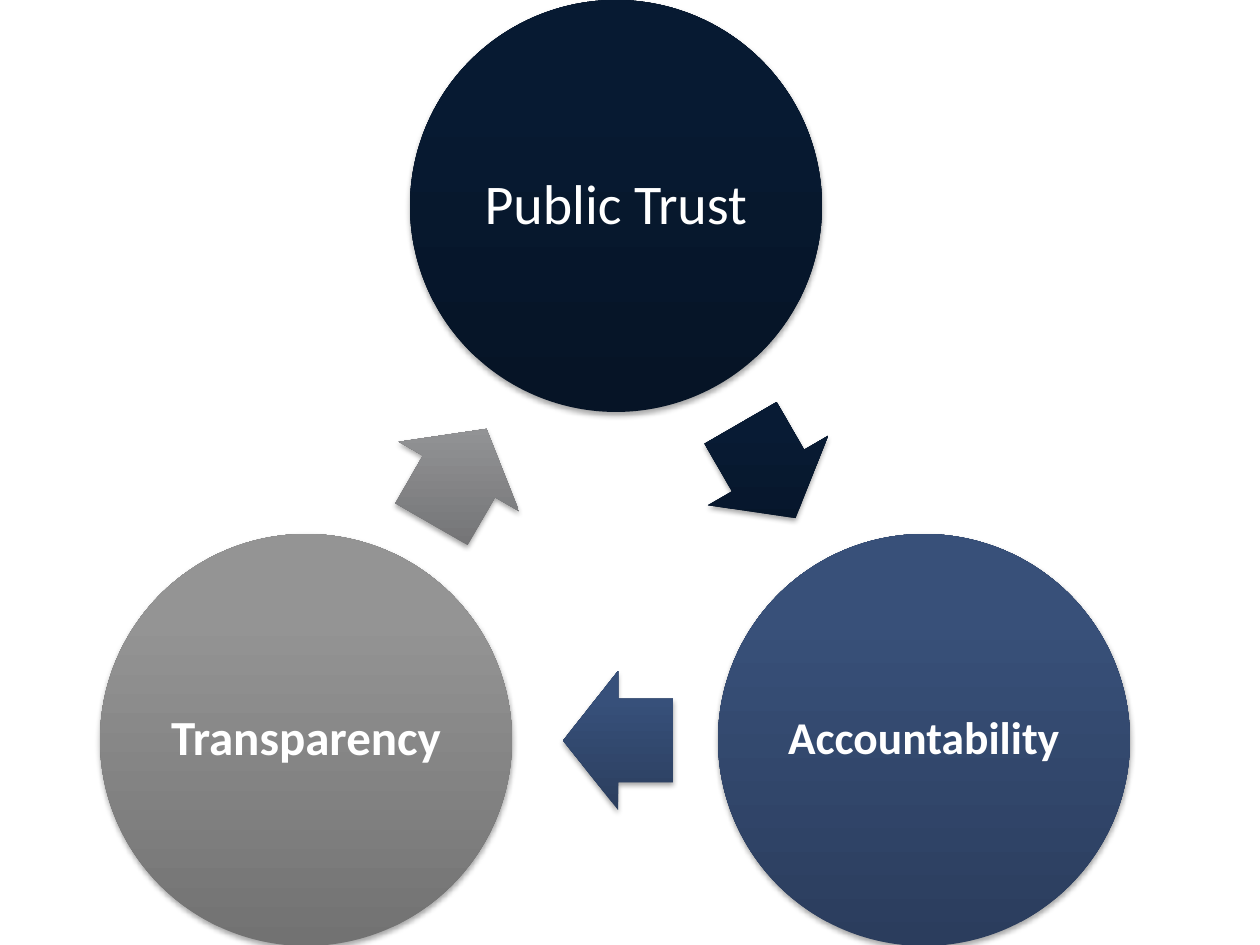
from pptx import Presentation
from pptx.dml.color import RGBColor
from pptx.enum.shapes import MSO_SHAPE as Preset
from pptx.enum.text import MSO_ANCHOR as Anchor, PP_ALIGN as Align
from pptx.oxml import parse_xml
from pptx.oxml.ns import nsdecls, qn
from pptx.util import Pt

PX = 914400 / 126
CIRCLE = 412
ARROW_WIDTH, ARROW_HEIGHT = 110, 139
STOPS = (0, 80, 100)

STAGES = [
    {"text": "Public Trust", "size": 32, "bold": False, "circle_at": (410, 0),
     "circle_colors": ("061426", "071A32", "071A33"), "arrow_at": (713, 401),
     "arrow_colors": ("061528", "081B34", "071B35"), "rotation": 60},
    {"text": "Accountability", "size": 26, "bold": True, "circle_at": (718, 534),
     "circle_colors": ("2B3D5D", "385079", "37507B"), "arrow_at": (563, 671),
     "arrow_colors": ("2B3E5E", "37507A", "36507C"), "rotation": 180},
    {"text": "Transparency", "size": 28, "bold": True, "circle_at": (100, 534),
     "circle_colors": ("727272", "949494", "959595"), "arrow_at": (404, 407),
     "arrow_colors": ("717173", "929395", "939496"), "rotation": 300},
]


def px(length):
    """Turn pixels into EMU."""
    return round(length * PX)


def rgb(color):
    """Turn a hex string into a colour."""
    return RGBColor.from_string(color)


def apply_gradient(shape, colors):
    """Fill a shape from bottom to top, keeping the direction upright."""
    stops = "".join(
        f'<a:gs pos="{stop * 1000}"><a:srgbClr val="{rgb(color)}"/></a:gs>'
        for stop, color in zip(STOPS, colors))
    gradient = parse_xml(
        f'<a:gradFill {nsdecls("a")} rotWithShape="0"><a:gsLst>{stops}</a:gsLst>'
        '<a:lin ang="16200000" scaled="0"/></a:gradFill>')
    shape._element.spPr.find(qn("a:prstGeom")).addnext(gradient)


def apply_shadow(shape):
    """Give a shape a soft shadow below it."""
    shape.shadow.inherit = False
    shape._element.spPr.find(qn("a:effectLst")).append(parse_xml(
        f'<a:outerShdw {nsdecls("a")} blurRad="{Pt(3.1)}" dist="{Pt(1.8)}" '
        'dir="5400000" rotWithShape="0"><a:srgbClr val="000000">'
        '<a:alpha val="35000"/></a:srgbClr></a:outerShdw>'))


def add_shaded_shape(slide, preset, box, colors):
    """Add a borderless shape with a gradient and a shadow."""
    shape = slide.shapes.add_shape(preset, *map(px, box))
    shape.line.fill.background()
    apply_gradient(shape, colors)
    apply_shadow(shape)
    return shape


def add_label(shape, text, size, bold):
    """Write a centred label inside a shape."""
    frame = shape.text_frame
    frame.word_wrap = True
    frame.vertical_anchor = Anchor.MIDDLE
    frame.margin_left = frame.margin_right = px(5)
    frame.margin_top = frame.margin_bottom = px(5)
    frame.text = text
    paragraph = frame.paragraphs[0]
    paragraph.alignment = Align.CENTER
    paragraph.line_spacing = 0.9
    font = paragraph.runs[0].font
    font.name, font.size, font.bold = "Calibri", Pt(size), bold
    font.color.rgb = rgb("FFFFFF")


def add_stage(slide, stage):
    """Add one circle of the cycle and the arrow that leaves it."""
    circle = add_shaded_shape(slide, Preset.OVAL, (*stage["circle_at"], CIRCLE, CIRCLE),
                              stage["circle_colors"])
    add_label(circle, stage["text"], stage["size"], stage["bold"])
    arrow = add_shaded_shape(slide, Preset.RIGHT_ARROW,
                             (*stage["arrow_at"], ARROW_WIDTH, ARROW_HEIGHT),
                             stage["arrow_colors"])
    arrow.adjustments[0], arrow.adjustments[1] = 0.6, 0.5
    arrow.rotation = stage["rotation"]


def main():
    """Build and save the slide."""
    presentation = Presentation()
    presentation.slide_width, presentation.slide_height = px(1260), px(945)
    slide = presentation.slides.add_slide(presentation.slide_layouts[6])
    for stage in STAGES:
        add_stage(slide, stage)
    presentation.save("out.pptx")


if __name__ == "__main__":
    main()
